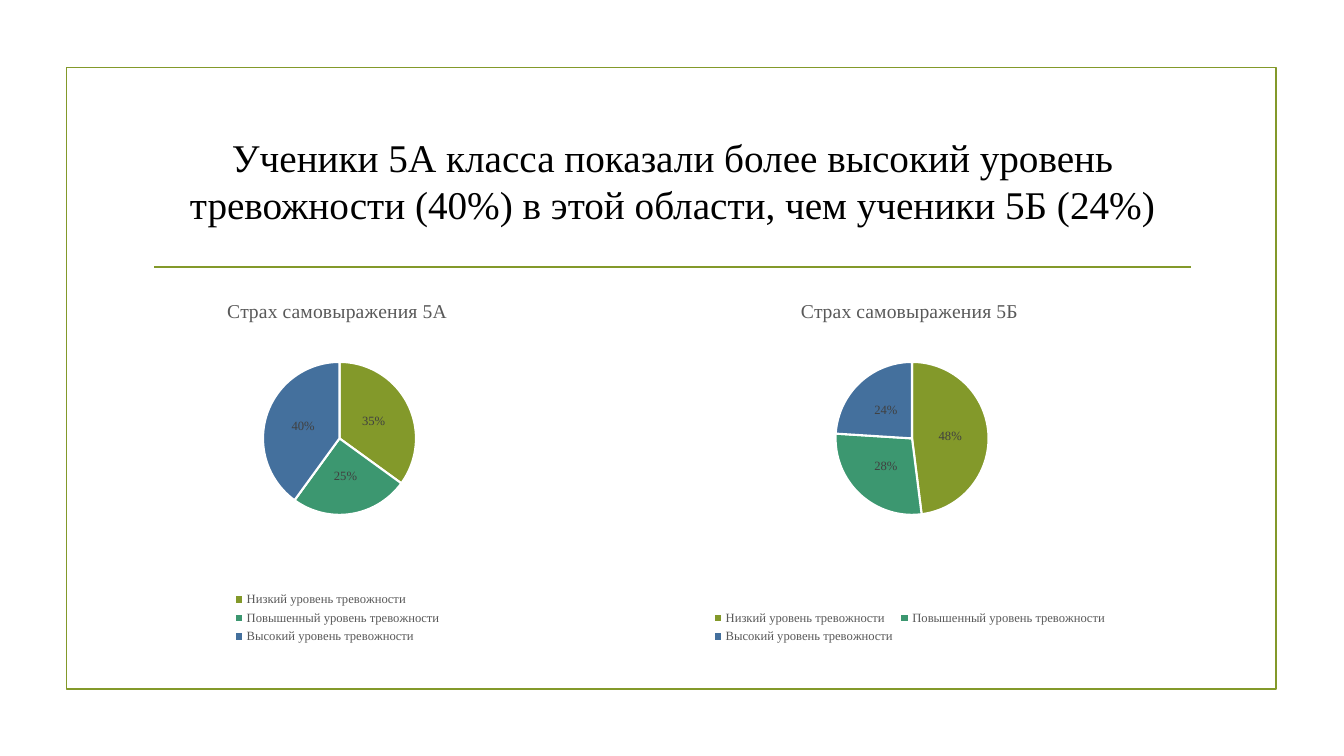
from lxml import etree
from pptx import Presentation, util as u
from pptx.chart.data import CategoryChartData
from pptx.dml.color import RGBColor
from pptx.enum import chart as c, shapes, text
from pptx.oxml import parse_xml
from pptx.oxml.ns import nsdecls, qn

LEVELS = ["Низкий уровень тревожности", "Повышенный уровень тревожности", "Высокий уровень тревожности"]
LEVEL_COLORS = ["83992A", "3C9770", "44709D"]
ACCENT, GREY = "83992A", "595959"
PLOT_AREA = {"x": 0.102, "y": 0.218, "w": 0.808, "h": 0.418}


def color(value):
    return RGBColor.from_string(value)


class SlideBuilder:
    """Holds the style and the current slide; lengths are percent of the slide's size."""

    font_name = "Times New Roman"

    def __init__(self, presentation):
        self.width, self.height = presentation.slide_width, presentation.slide_height
        self.slide = presentation.slides.add_slide(presentation.slide_layouts[6])

    def place(self, left, top, width, height):
        return [round(share * side / 100) for share, side in
                zip((left, top, width, height), (self.width, self.height) * 2)]

    def style(self, font, size, value):
        for name, setting in {"name": self.font_name, "size": u.Pt(size), "bold": False}.items():
            setattr(font, name, setting)
        font.color.rgb = color(value)

    def outline(self, line, value, points):
        line.color.rgb = color(value)
        line.width = u.Pt(points)

    def frame(self, *area):
        shape = self.slide.shapes.add_shape(shapes.MSO_SHAPE.RECTANGLE, *self.place(*area))
        shape.shadow.inherit = False
        shape.fill.background()
        self.outline(shape.line, ACCENT, 1.25)

    def rule(self, left, right, top):
        start_x, start_y, end_x, end_y = self.place(left, top, right, top)
        connector = self.slide.shapes.add_connector(
            shapes.MSO_CONNECTOR.STRAIGHT, start_x, start_y, end_x, end_y)
        self.outline(connector.line, ACCENT, 1.25)
        etree.SubElement(connector._element.spPr, qn("a:effectLst"))

    def title(self, wording, *area):
        frame = self.slide.shapes.add_textbox(*self.place(*area)).text_frame
        for name, setting in {"word_wrap": True, "vertical_anchor": text.MSO_ANCHOR.MIDDLE}.items():
            setattr(frame, name, setting)
        paragraph = frame.paragraphs[0]
        paragraph.text = wording
        paragraph.alignment = text.PP_ALIGN.CENTER
        self.style(paragraph.runs[0].font, 28, "000000")

    def pie(self, name, values, *area):
        data = CategoryChartData()
        data.categories = LEVELS
        data.add_series(name, values)
        chart = self.slide.shapes.add_chart(c.XL_CHART_TYPE.PIE, *self.place(*area), data).chart
        self.style(chart.font, 10, "000000")
        chart.has_title = True
        chart.chart_title.text_frame.text = name
        self.style(chart.chart_title.text_frame.paragraphs[0].runs[0].font, 14, GREY)
        chart.has_legend = True
        chart.legend.position = c.XL_LEGEND_POSITION.BOTTOM
        chart.legend.include_in_layout = False
        self.style(chart.legend.font, 9, GREY)
        self.slices(chart.plots[0])
        self.plot_layout(chart)

    def slices(self, plot):
        plot.vary_by_categories = True
        for index, value in enumerate(LEVEL_COLORS):
            point = plot.series[0].points[index].format
            point.fill.solid()
            point.fill.fore_color.rgb = color(value)
            self.outline(point.line, "FFFFFF", 1.5)
        labels = plot.series[0].data_labels
        settings = {"show_percentage": True, "show_value": False, "number_format": "0%",
                    "number_format_is_linked": False, "position": c.XL_LABEL_POSITION.CENTER}
        for name, setting in settings.items():
            setattr(labels, name, setting)
        self.style(labels.font, 9, "404040")

    def plot_layout(self, chart):
        plot_area = chart._chartSpace.chart.plotArea
        for old in plot_area.findall(qn("c:layout")):
            plot_area.remove(old)
        sizes = "".join(f'<c:{side} val="{share}"/>' for side, share in PLOT_AREA.items())
        plot_area.insert(0, parse_xml(
            f'<c:layout {nsdecls("c")}><c:manualLayout><c:layoutTarget val="inner"/>'
            f'<c:xMode val="edge"/><c:yMode val="edge"/>{sizes}</c:manualLayout></c:layout>'))


def main():
    presentation = Presentation()
    presentation.slide_width, presentation.slide_height = u.Inches(13.33), u.Inches(7.5)
    builder = SlideBuilder(presentation)
    builder.frame(4.95, 8.93, 90, 82.27)
    builder.rule(11.48, 88.6, 35.33)
    builder.title("Ученики 5А класса показали более высокий уровень тревожности (40%) "
                  "в этой области, чем ученики 5Б (24%)", 10.65, 14.27, 78.77, 19.07)
    for group, values, left, width in (("5А", (35, 25, 40), 10.65, 28.88),
                                       ("5Б", (48, 28, 24), 51.39, 32.56)):
        builder.pie(f"Страх самовыражения {group}", values, left, 37.33, width, 48.4)
    presentation.save("out.pptx")


if __name__ == "__main__":
    main()
